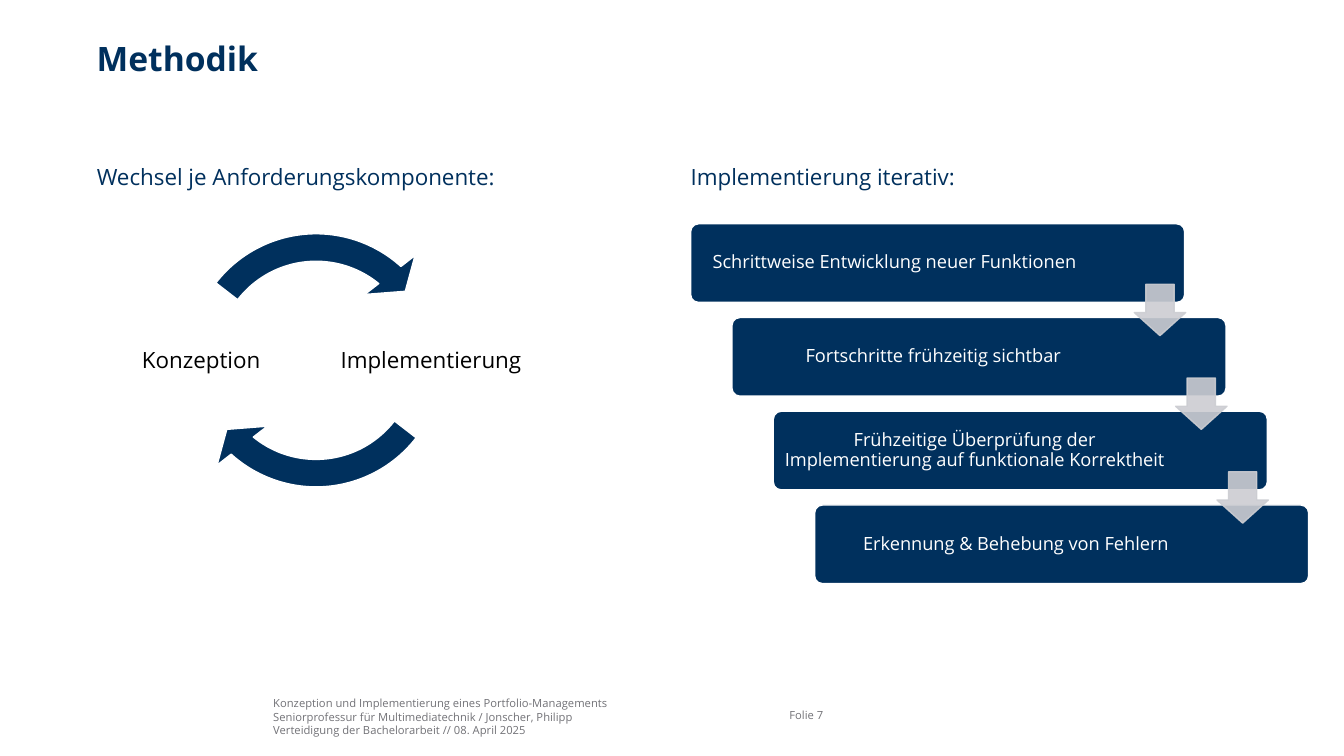
from dataclasses import dataclass

from lxml import etree
from pptx import Presentation
from pptx.dml.color import RGBColor
from pptx.enum.shapes import MSO_SHAPE as Shape
from pptx.enum.text import MSO_ANCHOR as Anchor, PP_ALIGN as Align
from pptx.oxml.ns import qn
from pptx.util import Inches, Pt


@dataclass(frozen=True)
class Theme:
    font: str = "Open Sans"
    navy: str = "00305D"
    gray: str = "727277"
    arrow: str = "CCCDD2"
    white: str = "FFFFFF"
    black: str = "000000"
    title: int = 24
    body: int = 16
    step: int = 13
    footer: int = 8


THEME = Theme()

# text, (left, top, width, height), size, colour, bold
TEXTS = [
    ("Methodik", (0.96, 0.38, 11.57, 0.75), THEME.title, THEME.navy, True),
    ("Wechsel je Anforderungskomponente:", (0.96, 1.62, 5.68, 0.4),
     THEME.body, THEME.navy, False),
    ("Implementierung iterativ:", (6.85, 1.62, 5.68, 0.4),
     THEME.body, THEME.navy, False),
    ("Konzeption und Implementierung eines Portfolio-Managements\n"
     "Seniorprofessur für Multimediatechnik / Jonscher, Philipp\n"
     "Verteidigung der Bachelorarbeit // 08. April 2025",
     (2.71, 6.91, 4.9, 0.45), THEME.footer, THEME.gray, False),
    ("Folie 7", (7.83, 7.03, 0.77, 0.15), THEME.footer, THEME.gray, False),
]
CYCLE_LABELS = [
    ("Konzeption", (0.94, 2.88, 2.11, 1.4)),
    ("Implementierung", (3.29, 2.88, 1.97, 1.4)),
]
CYCLE_BOX = (1.7, 2.14, 2.87, 2.87)
CYCLE_ANGLES = [(78.51, 22.64), (186.51, 130.64)]  # head, tail
# text, space kept free at the right
STEPS = [
    ("Schrittweise Entwicklung neuer Funktionen", 0.91),
    ("Fortschritte frühzeitig sichtbar", 0.96),
    ("Frühzeitige Überprüfung der Implementierung auf funktionale Korrektheit", 0.96),
    ("Erkennung & Behebung von Fehlern", 0.96),
]
STEP_BOX = (6.85, 2.22, 4.9, 0.78)
STEP_ARROW = (11.25, 2.82, 0.51, 0.51)
STEP_SHIFT = (0.41, 0.93)


def write(shape, text, size, color, bold=False, centered=False, insets=(0, 0, 0, 0)):
    frame = shape.text_frame
    frame.word_wrap = True
    (frame.margin_left, frame.margin_top,
     frame.margin_right, frame.margin_bottom) = map(Inches, insets)
    frame.vertical_anchor = Anchor.MIDDLE if centered else Anchor.TOP
    frame.text = text
    for paragraph in frame.paragraphs:
        paragraph.alignment = Align.CENTER if centered else Align.LEFT
        if centered:
            paragraph.line_spacing = 0.9
        font = paragraph.font
        font.name, font.size, font.bold = THEME.font, Pt(size), bold
        font.color.rgb = RGBColor.from_string(color)


def add_text(slide, box, *args, **options):
    write(slide.shapes.add_textbox(*map(Inches, box)), *args, **options)


def add_filled(slide, kind, box, adjustments, fill, line):
    shape = slide.shapes.add_shape(kind, *map(Inches, box))
    shape.shadow.inherit = False
    for index, value in enumerate(adjustments):
        shape.adjustments[index] = value
    shape.fill.solid()
    shape.fill.fore_color.rgb = RGBColor.from_string(fill)
    shape.line.color.rgb = RGBColor.from_string(line)
    shape.line.width = Pt(1)
    return shape


def set_opacity(shape, percent):
    """Apply the opacity to both fill and outline."""
    for color in shape.fill._xPr.iter(qn("a:srgbClr")):
        etree.SubElement(color, qn("a:alpha")).set("val", str(percent * 1000))


def shifted(box, index):
    left, top, width, height = box
    return left + index * STEP_SHIFT[0], top + index * STEP_SHIFT[1], width, height


def add_cycle(slide):
    for head, tail in CYCLE_ANGLES:
        add_filled(slide, Shape.CIRCULAR_ARROW, CYCLE_BOX,
                   (0.095, 6.85, head, tail, 0.11), THEME.navy, THEME.white)
    for text, box in CYCLE_LABELS:
        add_text(slide, box, text, THEME.body, THEME.black,
                 centered=True, insets=(0.02,) * 4)


def add_staircase(slide):
    for index, (text, free_right) in enumerate(STEPS):
        step = add_filled(slide, Shape.ROUNDED_RECTANGLE, shifted(STEP_BOX, index),
                          (0.1,), THEME.navy, THEME.white)
        write(step, text, THEME.step, THEME.white, centered=True,
              insets=(0.05, 0.05, free_right, 0.05))
    for index in range(len(STEPS) - 1):
        arrow = add_filled(slide, Shape.DOWN_ARROW, shifted(STEP_ARROW, index),
                           (0.55, 0.45), THEME.arrow, THEME.arrow)
        set_opacity(arrow, 90)


def main():
    presentation = Presentation()
    presentation.slide_width, presentation.slide_height = Inches(13.33), Inches(7.5)
    slide = presentation.slides.add_slide(presentation.slide_layouts[6])
    for text, box, size, color, bold in TEXTS:
        add_text(slide, box, text, size, color, bold)
    add_cycle(slide)
    add_staircase(slide)
    presentation.save("out.pptx")


if __name__ == "__main__":
    main()
